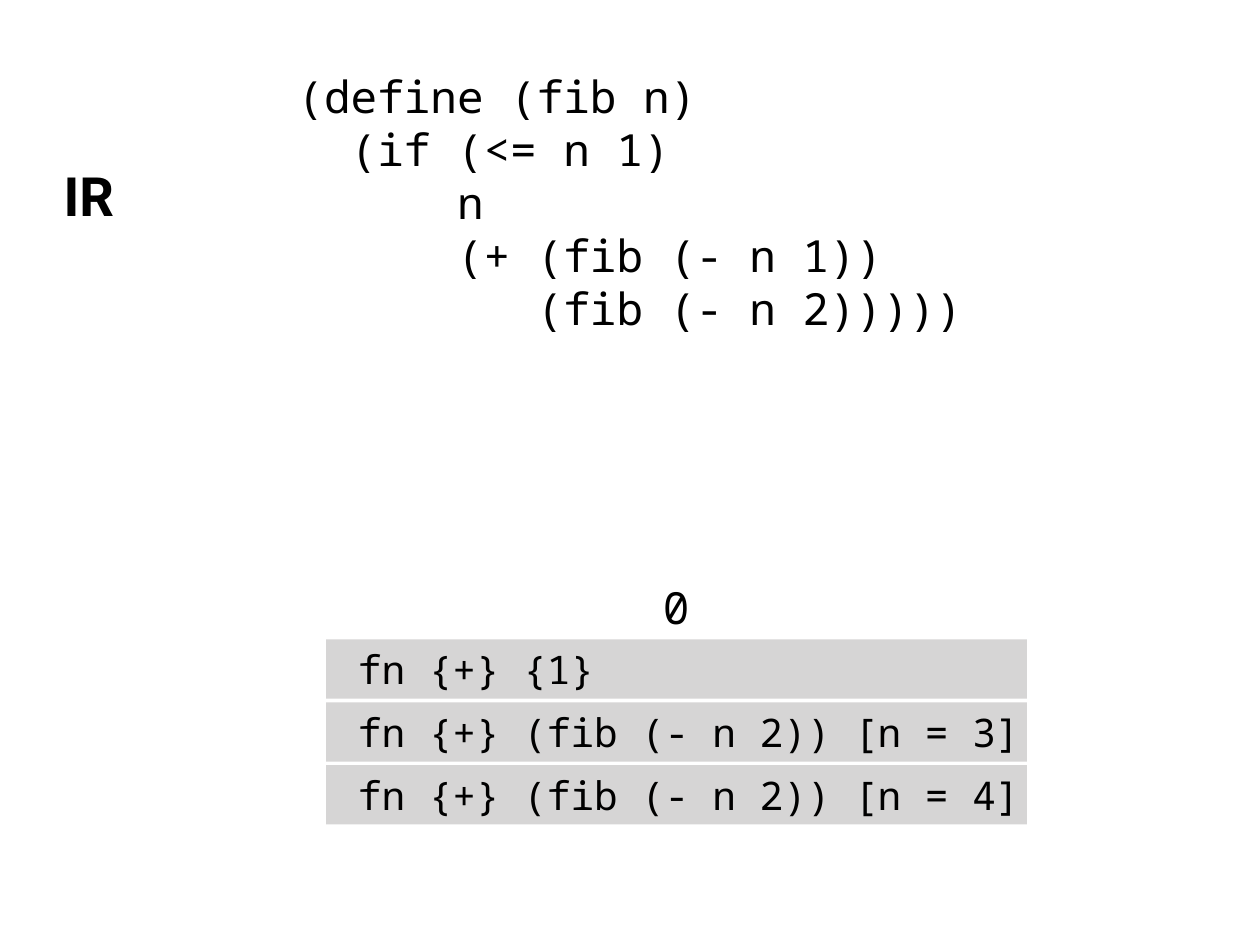
from dataclasses import dataclass

import pptx
import pptx.dml.color
import pptx.enum.shapes
import pptx.enum.text
import pptx.util
from pptx.util import Cm


@dataclass(frozen=True)
class Theme:
    ink: str = "000000"
    frame_fill: str = "D6D5D5"
    code_font: str = "Noto Sans Mono"
    title_font: str = "Roboto"
    title_size: int = 44
    code_size: int = 36
    frame_size: int = 32
    inset: float = 0.15


@dataclass(frozen=True)
class Box:
    left: float
    top: float
    width: float
    height: float

    def lengths(self) -> tuple:
        return Cm(self.left), Cm(self.top), Cm(self.width), Cm(self.height)


@dataclass(frozen=True)
class StackFrame:
    level: int
    code: str


THEME = Theme()
ALIGN = pptx.enum.text.PP_ALIGN
ANCHOR = pptx.enum.text.MSO_ANCHOR

TITLE_BOX = Box(1.6, 4.52, 1.9, 2.13)
PROGRAM_BOX = Box(8.38, 1.83, 19.38, 7.52)
VALUE_BOX = Box(18.85, 16.54, 1.09, 1.73)
TOP_FRAME_BOX = Box(9.35, 18.34, 20.09, 1.7)
FRAME_PITCH = 1.8
FRAME_INDENT = 0.91

PROGRAM = """(define (fib n)
  (if (<= n 1)
      n
      (+ (fib (- n 1))
         (fib (- n 2)))))"""

STACK = [
    StackFrame(0, "fn {+} {1}"),
    StackFrame(1, "fn {+} (fib (- n 2)) [n = 3]"),
    StackFrame(2, "fn {+} (fib (- n 2)) [n = 4]"),
]


def rgb(value: str) -> pptx.dml.color.RGBColor:
    return pptx.dml.color.RGBColor.from_string(value)


def write(shape, text: str, *, size: int, font: str = THEME.code_font,
          bold: bool = False, align=ALIGN.LEFT, anchor=ANCHOR.MIDDLE,
          wrap: bool = False, left_inset: float = THEME.inset,
          right_inset: float = THEME.inset) -> None:
    frame = shape.text_frame
    frame.text = text
    frame.word_wrap = wrap
    frame.auto_size = pptx.enum.text.MSO_AUTO_SIZE.NONE
    frame.vertical_anchor = anchor
    frame.margin_left, frame.margin_right = Cm(left_inset), Cm(right_inset)
    frame.margin_top = frame.margin_bottom = Cm(THEME.inset)
    for paragraph in frame.paragraphs:
        paragraph.alignment = align
        for run in paragraph.runs:
            run.font.name = font
            run.font.size = pptx.util.Pt(size)
            run.font.bold = bold
            run.font.color.rgb = rgb(THEME.ink)


def add_title(slide, text: str) -> None:
    title = slide.shapes.title
    title.left, title.top, title.width, title.height = TITLE_BOX.lengths()
    write(title, text, size=THEME.title_size, font=THEME.title_font,
          bold=True, align=ALIGN.CENTER)


def add_code(slide, box: Box, text: str, anchor) -> None:
    code = slide.shapes.add_textbox(*box.lengths())
    write(code, text, size=THEME.code_size, anchor=anchor)


def add_stack_frame(slide, entry: StackFrame) -> None:
    box = Box(TOP_FRAME_BOX.left, TOP_FRAME_BOX.top + entry.level * FRAME_PITCH,
              TOP_FRAME_BOX.width, TOP_FRAME_BOX.height)
    bar = slide.shapes.add_shape(
        pptx.enum.shapes.MSO_SHAPE.RECTANGLE, *box.lengths())
    bar.shadow.inherit = False
    bar.fill.solid()
    bar.fill.fore_color.rgb = rgb(THEME.frame_fill)
    bar.line.fill.background()
    write(bar, entry.code, size=THEME.frame_size, wrap=True,
          left_inset=FRAME_INDENT, right_inset=0)


def main() -> None:
    presentation = pptx.Presentation()
    presentation.slide_width = Cm(36.12)
    presentation.slide_height = Cm(27.1)
    slide = presentation.slides.add_slide(presentation.slide_layouts[5])
    add_title(slide, "IR")
    add_code(slide, PROGRAM_BOX, PROGRAM, ANCHOR.TOP)
    add_code(slide, VALUE_BOX, "0", ANCHOR.MIDDLE)
    for entry in STACK:
        add_stack_frame(slide, entry)
    presentation.save("out.pptx")


if __name__ == "__main__":
    main()
